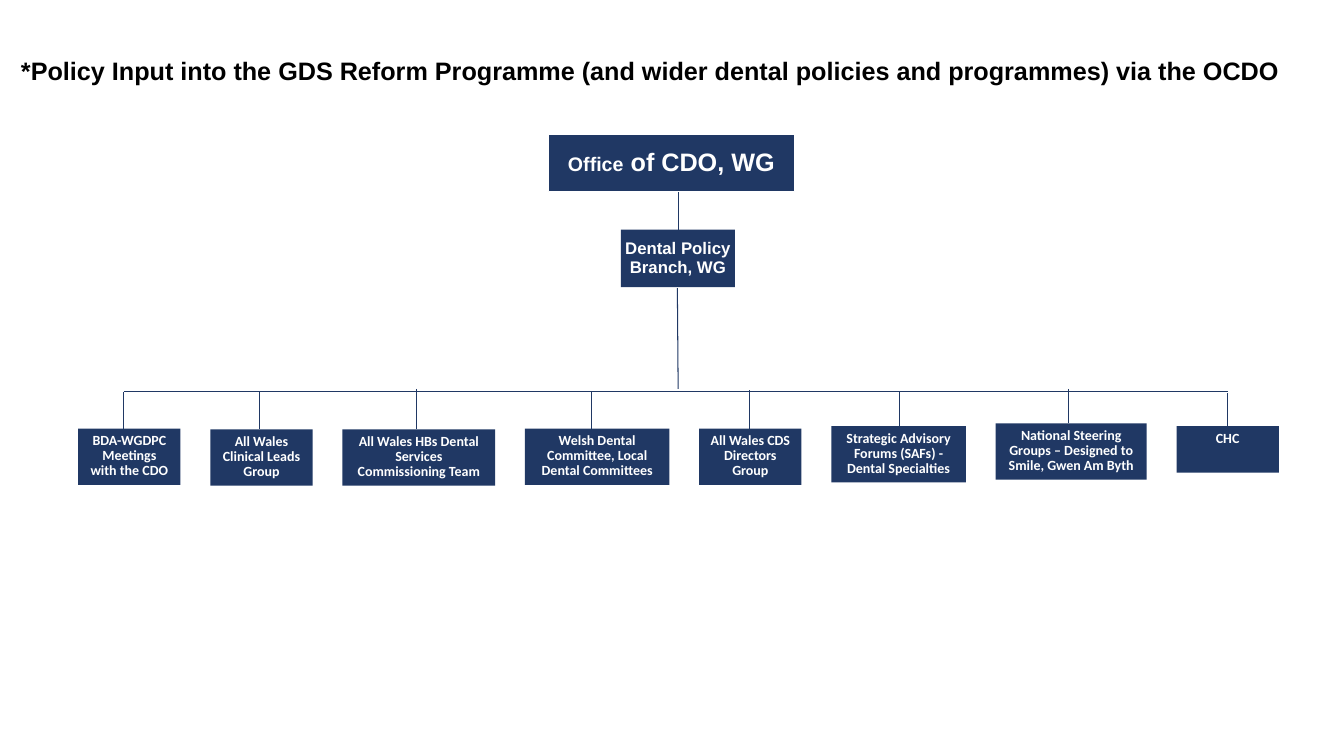
import pptx
import pptx.util
import pptx.dml.color
import pptx.enum.shapes
import pptx.enum.text
from lxml import etree

Cm, Pt = pptx.util.Cm, pptx.util.Pt
Anchor = pptx.enum.text.MSO_ANCHOR
Align = pptx.enum.text.PP_ALIGN

# Content
NAVY, WHITE, BLACK = "203864", "FFFFFF", "000000"
TITLE = ("*Policy Input into the GDS Reform Programme "
         "(and wider dental policies and programmes) via the OCDO")
OFFICE = [("Office", 14), (" of CDO, WG", 18)]
BRANCH = [("Dental Policy Branch, WG", 12)]

# Groups: text, width, top, height, stem x, stem top (cm)
GROUPS = [
    ("BDA-WGDPC Meetings with the CDO", 2.58, 10.8, 1.42, 3.12, 9.88),
    ("All Wales Clinical Leads Group", 2.58, 10.82, 1.42, 6.55, 9.86),
    ("All Wales HBs Dental Services Commissioning Team",
     3.85, 10.82, 1.42, 10.49, 9.8),
    ("Welsh Dental Committee, Local Dental Committees",
     3.64, 10.8, 1.42, 14.91, 9.86),
    ("All Wales CDS Directors Group", 2.58, 10.8, 1.42, 18.9, 9.83),
    ("Strategic Advisory Forums (SAFs) - Dental Specialties",
     3.39, 10.74, 1.42, 22.68, 9.88),
    ("National Steering Groups – Designed to Smile, Gwen Am Byth",
     3.81, 10.67, 1.42, 26.92, 9.8),
    ("CHC", 2.58, 10.74, 1.17, 30.94, 9.91),
]
START, GAP, BAR = 1.97, 0.75, 9.86

deck = pptx.Presentation()
deck.slide_width, deck.slide_height = Cm(33.87), Cm(19.05)
slide = deck.slides.add_slide(deck.slide_layouts[6])


def color(code):
    return pptx.dml.color.RGBColor.from_string(code)


def write(para, parts, face, code):
    for text, size in parts:
        run = para.add_run()
        run.text = text
        run.font.size, run.font.name = Pt(size), face
        run.font.bold = True
        run.font.color.rgb = color(code)


def box(left, top, width, height, parts, face="Arial"):
    shape = slide.shapes.add_shape(
        pptx.enum.shapes.MSO_SHAPE.RECTANGLE,
        Cm(left), Cm(top), Cm(width), Cm(height))
    shape.shadow.inherit = False
    shape.fill.solid()
    shape.fill.fore_color.rgb = color(NAVY)
    shape.line.fill.background()
    frame = shape.text_frame
    frame.word_wrap = True
    frame.vertical_anchor = Anchor.TOP
    para = frame.paragraphs[0]
    para.alignment, para.line_spacing = Align.CENTER, 0.9
    write(para, parts, face, WHITE)
    return shape


def head(*args):
    shape = box(*args)
    frame = shape.text_frame
    frame.vertical_anchor = Anchor.MIDDLE
    frame.margin_left = frame.margin_right = Cm(0.03)
    frame.margin_top = frame.margin_bottom = Cm(0.03)
    return shape


def line(x1, y1, x2, y2):
    link = slide.shapes.add_connector(
        pptx.enum.shapes.MSO_CONNECTOR.STRAIGHT,
        Cm(x1), Cm(y1), Cm(x2), Cm(y2))
    link.line.color.rgb = color(NAVY)
    link.line.width = Pt(0.75)
    props = link._element.spPr
    etree.SubElement(props, pptx.oxml.ns.qn("a:effectLst"))


# Title
title = slide.shapes.add_textbox(Cm(0.28), Cm(1.27), Cm(32.54), Cm(1.02))
title.text_frame.word_wrap = False
write(title.text_frame.paragraphs[0], [(TITLE, 18)], "Arial", BLACK)

# Lines
line(17.09, 4.75, 17.09, 6.73)
line(17.07, 7.26, 17.09, 9.8)
line(GROUPS[0][4], BAR, GROUPS[-1][4], BAR)
for text, width, top, height, stem, rise in GROUPS:
    line(stem, rise, stem, top)

# Upper boxes
office = head(13.82, 3.38, 6.2, 1.45, OFFICE)
office.line.color.rgb = color(WHITE)
office.line.width = Pt(1)
head(15.65, 5.79, 2.87, 1.45, BRANCH)

# Row of groups
left = START
for text, width, top, height, stem, rise in GROUPS:
    box(left, top, width, height, [(text, 10)], "Calibri")
    left += width + GAP

deck.save("out.pptx")
